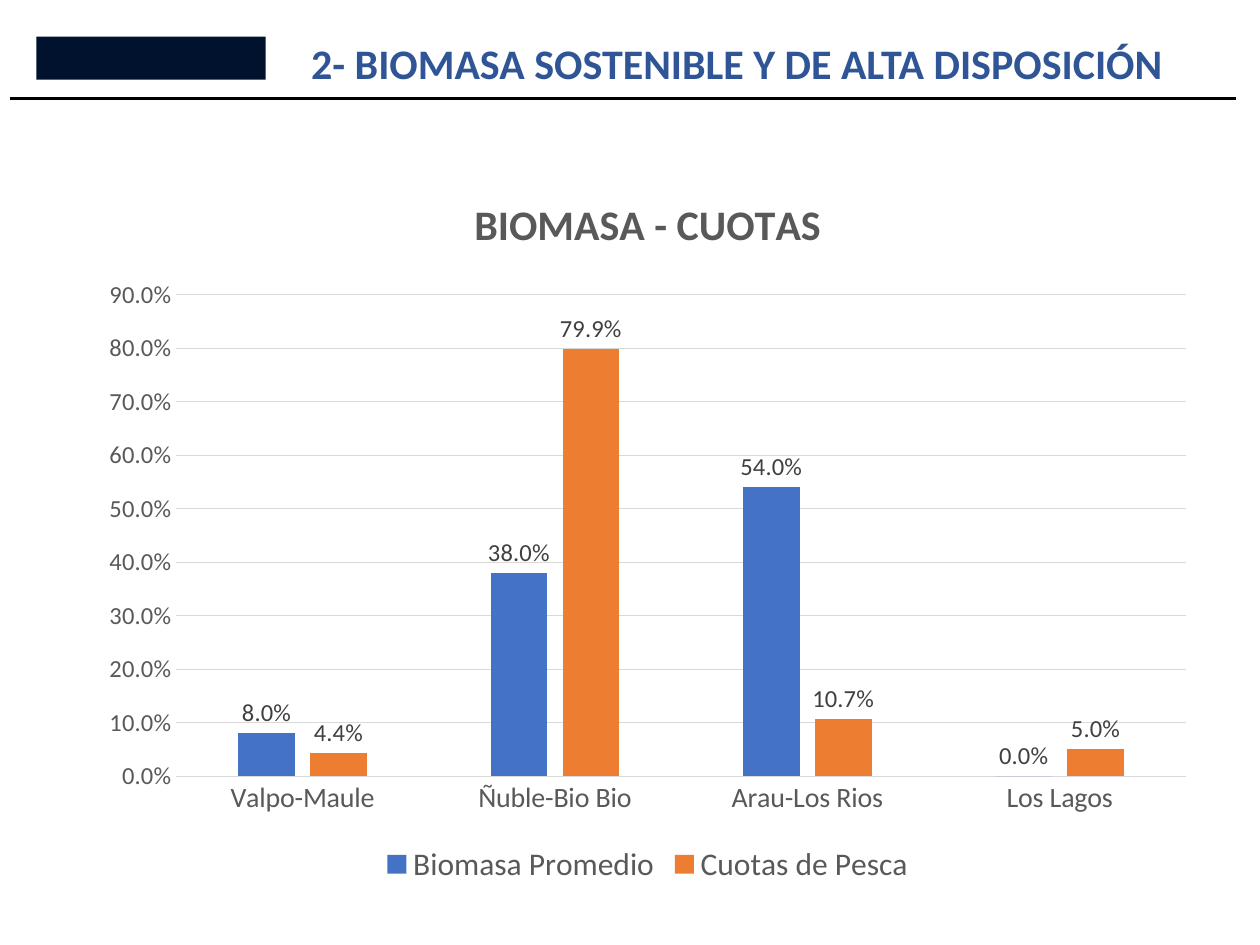
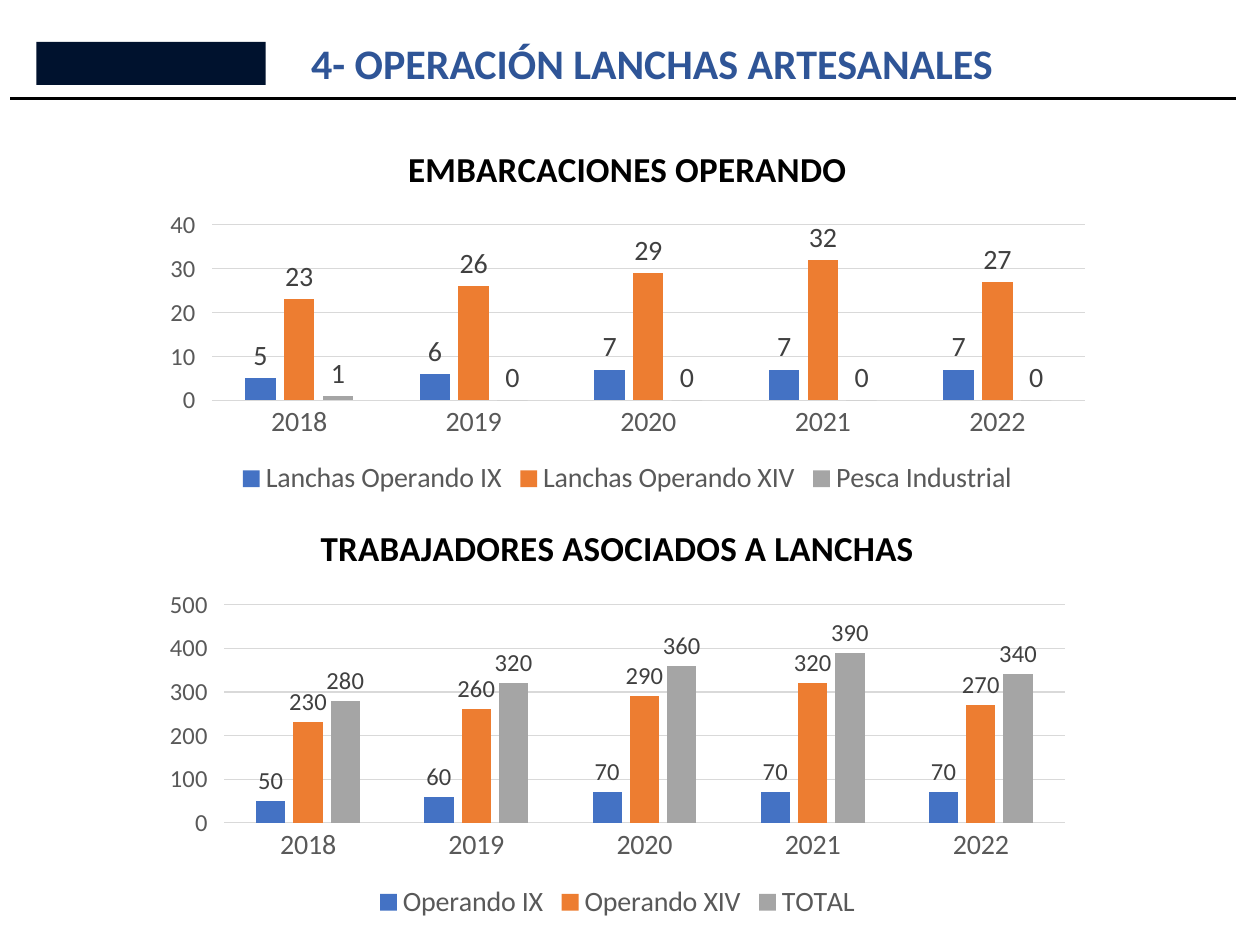
from lxml import etree
from pptx import Presentation
from pptx.chart.data import CategoryChartData
from pptx.dml.color import RGBColor
from pptx.enum.chart import XL_CHART_TYPE, XL_LABEL_POSITION, XL_LEGEND_POSITION, XL_TICK_MARK
from pptx.enum.shapes import MSO_CONNECTOR, MSO_SHAPE
from pptx.enum.text import MSO_ANCHOR, MSO_AUTO_SIZE, PP_ALIGN
from pptx.oxml.ns import qn
from pptx.util import Pt

COLUMNS = XL_CHART_TYPE.COLUMN_CLUSTERED
OUTSIDE = XL_LABEL_POSITION.OUTSIDE_END
BOTTOM = XL_LEGEND_POSITION.BOTTOM
NO_TICK = XL_TICK_MARK.NONE
STRAIGHT = MSO_CONNECTOR.STRAIGHT
RECTANGLE = MSO_SHAPE.RECTANGLE
TOP = MSO_ANCHOR.TOP
LEFT = PP_ALIGN.LEFT
NO_FIT = MSO_AUTO_SIZE.NONE

FONT = "Calibri"
NAVY, BLUE, BLACK = "00122E", "2F5597", "000000"
GREY, LABEL_GREY, GRID_GREY = "595959", "404040", "D9D9D9"
SERIES_COLORS = ["4472C4", "ED7D31", "A5A5A5"]
TITLE_ONLY = 5
PERCENT = "0.0%"
WHOLE = r"#,##0\ \ "
HEADER_BOX = (5.8, 18, 700.5, 38.2)
YEARS = ["2018", "2019", "2020", "2021", "2022"]


def rgb(value):
    return RGBColor.from_string(value)


def style_font(font, size, color, bold=False):
    font.name = FONT
    font.size = Pt(size)
    font.bold = bold
    font.color.rgb = rgb(color)


def style_line(line, color, width):
    line.color.rgb = rgb(color)
    line.width = Pt(width)


def add_header(s, box, title, title_width, logo_drop):
    x, y, w, h = box
    title_shape = s.shapes.title
    title_shape.left, title_shape.top = Pt(x + 164.8), Pt(y)
    title_shape.width, title_shape.height = Pt(title_width), Pt(36)
    tf = title_shape.text_frame
    tf.word_wrap = False
    tf.auto_size = NO_FIT
    tf.vertical_anchor = TOP
    p = tf.paragraphs[0]
    p.alignment = LEFT
    r = p.add_run()
    r.text = title
    style_font(r.font, 24, BLUE, True)

    logo = s.shapes.add_shape(RECTANGLE, Pt(x + 15), Pt(y + logo_drop), Pt(131), Pt(24.5))
    logo.shadow.inherit = False
    logo.fill.solid()
    logo.fill.fore_color.rgb = rgb(NAVY)
    logo.line.fill.background()

    rule = s.shapes.add_connector(STRAIGHT, Pt(x), Pt(y + h), Pt(x + w), Pt(y + h))
    style_line(rule.line, BLACK, 2)
    etree.SubElement(rule._element.spPr, qn("a:effectLst"))


def style_axes(chart, maximum, step, number_format):
    cat, val = chart.category_axis, chart.value_axis
    for axis, size in ((cat, 16), (val, 14)):
        axis.major_tick_mark = axis.minor_tick_mark = NO_TICK
        style_font(axis.tick_labels.font, size, GREY)
    style_line(cat.format.line, GRID_GREY, 0.75)
    val.format.line.fill.background()
    val.has_major_gridlines = True
    style_line(val.major_gridlines.format.line, GRID_GREY, 0.75)
    val.minimum_scale, val.maximum_scale, val.major_unit = 0, maximum, step
    val.tick_labels.number_format = number_format
    val.tick_labels.number_format_is_linked = False


def add_column_chart(s, box, title, categories, series, maximum, step, axis_format=WHOLE,
                     label_format="General", title_size=20, title_color=BLACK,
                     legend_size=16, label_size=14):
    data = CategoryChartData(number_format=label_format)
    data.categories = categories
    for name, values in series.items():
        data.add_series(name, values)
    chart = s.shapes.add_chart(COLUMNS, *map(Pt, box), data).chart
    style_font(chart.font, 10, BLACK)

    chart.has_title = True
    chart.chart_title.include_in_layout = False
    r = chart.chart_title.text_frame.paragraphs[0].add_run()
    r.text = title
    style_font(r.font, title_size, title_color, True)

    chart.has_legend = True
    chart.legend.position = BOTTOM
    chart.legend.include_in_layout = False
    style_font(chart.legend.font, legend_size, GREY)

    style_axes(chart, maximum, step, axis_format)

    plot = chart.plots[0]
    plot.vary_by_categories = False
    plot.gap_width, plot.overlap = 219, -27
    for column, color in zip(plot.series, SERIES_COLORS):
        column.format.fill.solid()
        column.format.fill.fore_color.rgb = rgb(color)
        column.invert_if_negative = False
        labels = column.data_labels
        labels.show_value = True
        labels.position = OUTSIDE
        labels.number_format = label_format
        labels.number_format_is_linked = False
        style_font(labels.font, label_size, LABEL_GREY)


def add_biomass_slide(prs):
    s = prs.slides.add_slide(prs.slide_layouts[TITLE_ONLY])
    add_header(s, HEADER_BOX, "2- BIOMASA SOSTENIBLE Y DE ALTA DISPOSICIÓN", 511.2, 3)
    add_column_chart(
        s, (49.7, 95.8, 640.8, 412.6), "BIOMASA - CUOTAS",
        ["Valpo-Maule", "Ñuble-Bio Bio", "Arau-Los Rios", "Los Lagos"],
        {"Biomasa Promedio": [0.08, 0.38, 0.54, 0],
         "Cuotas de Pesca": [0.044, 0.799, 0.107, 0.05]},
        0.9, 0.1, PERCENT, PERCENT, title_size=24, title_color=GREY, legend_size=18)


def add_boats_slide(prs):
    s = prs.slides.add_slide(prs.slide_layouts[TITLE_ONLY])
    add_header(s, HEADER_BOX, "4- OPERACIÓN LANCHAS ARTESANALES", 407.5, 6)
    add_column_chart(
        s, (86.4, 70.6, 544.3, 216), "EMBARCACIONES OPERANDO", YEARS,
        {"Lanchas Operando IX": [5, 6, 7, 7, 7],
         "Lanchas Operando XIV": [23, 26, 29, 32, 27],
         "Pesca Industrial": [1, 0, 0, 0, 0]},
        40, 10, label_size=16)
    add_column_chart(
        s, (86.4, 286.6, 532.8, 241.9), "TRABAJADORES ASOCIADOS A LANCHAS", YEARS,
        {"Operando IX": [50, 60, 70, 70, 70],
         "Operando XIV": [230, 260, 290, 320, 270],
         "TOTAL": [280, 320, 360, 390, 340]},
        500, 100)


def main():
    prs = Presentation()
    prs.slide_width, prs.slide_height = Pt(720), Pt(540)
    add_biomass_slide(prs)
    add_boats_slide(prs)
    prs.save("out.pptx")


if __name__ == "__main__":
    main()
